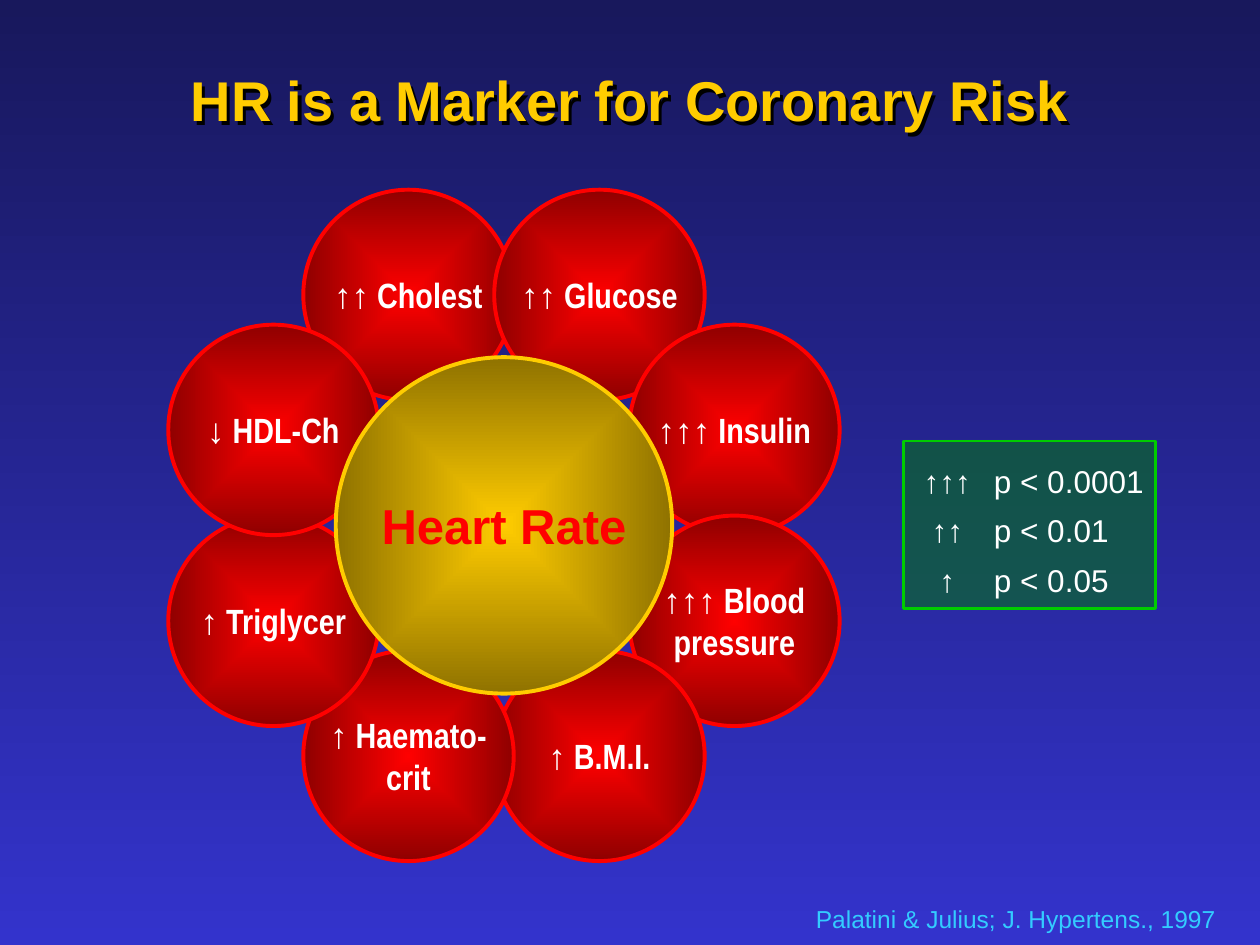
"""Build the slide on heart rate as a marker for coronary risk."""
from math import cos, radians, sin

from lxml import etree
from pptx import Presentation
from pptx.dml.color import RGBColor
from pptx.enum.shapes import MSO_SHAPE
from pptx.enum.text import MSO_ANCHOR, PP_ALIGN
from pptx.oxml.ns import qn
from pptx.util import Inches, Pt

OVAL, RECT = MSO_SHAPE.OVAL, MSO_SHAPE.RECTANGLE
LEFT, CENTER, RIGHT = PP_ALIGN.LEFT, PP_ALIGN.CENTER, PP_ALIGN.RIGHT
MIDDLE = MSO_ANCHOR.MIDDLE

NIGHT = RGBColor(0x18, 0x18, 0x5C)
BLUE = RGBColor(0x33, 0x33, 0xCC)
SKY = RGBColor(0x33, 0xCC, 0xFF)
GOLD = RGBColor(0xFF, 0xCC, 0x00)
DARK_GOLD = RGBColor(0x8F, 0x72, 0x00)
RED = RGBColor(0xFF, 0x00, 0x00)
DARK_RED = RGBColor(0x8F, 0x00, 0x00)
GREEN = RGBColor(0x00, 0x80, 0x00)
LIME = RGBColor(0x00, 0xCC, 0x00)
WHITE = RGBColor(0xFF, 0xFF, 0xFF)

TITLE = "HR is a Marker for Coronary Risk"
SOURCE = "Palatini & Julius; J. Hypertens., 1997"
HUB = "Heart Rate"
PETALS = ["↑↑ Cholest", "↑↑ Glucose", "↑↑↑ Insulin", "↑↑↑ Blood\npressure",
          "↑ B.M.I.", "↑ Haemato-\ncrit", "↑ Triglycer", "↓ HDL-Ch"]
LEGEND = [("↑↑↑", "p < 0.0001"), ("↑↑", "p < 0.01"), ("↑", "p < 0.05")]
LEGEND_TABS = [(0.25, "ctr"), (0.62, "l")]

CENTER_X, CENTER_Y = 4, 4.17
ORBIT = 1.98
PETAL_SIZE, HUB_SIZE = 1.67, 2.67
FIRST_ANGLE = -112.5


def add_xml(parent, tag, **attrs):
    return etree.SubElement(parent, qn(tag), {k: str(v) for k, v in attrs.items()})


def set_text(sp, text, size, color, font="Arial", bold=False, align=CENTER, wrap=False):
    tf = sp.text_frame
    tf.text = text
    tf.word_wrap = wrap
    tf.vertical_anchor = MIDDLE
    for p in tf.paragraphs:
        p.alignment = align
        for r in p.runs:
            r.font.name = font
            r.font.size = Pt(size)
            r.font.bold = bold
            r.font.color.rgb = color


def set_gradient(fill, *colors):
    fill.gradient()
    for stop, color in zip(fill.gradient_stops, colors):
        stop.color.rgb = color


def add_box(s, x, y, w, h):
    return s.shapes.add_textbox(Inches(x), Inches(y), Inches(w), Inches(h))


def add_shape(s, kind, x, y, w, h, line, width):
    sp = s.shapes.add_shape(kind, Inches(x), Inches(y), Inches(w), Inches(h))
    sp.shadow.inherit = False
    sp.line.color.rgb = line
    sp.line.width = Pt(width)
    return sp


def add_disc(s, cx, cy, size, inner, outer):
    sp = add_shape(s, OVAL, cx - size / 2, cy - size / 2, size, size, inner, 2.25)
    set_gradient(sp.fill, inner, outer)
    grad = sp._element.spPr.find(qn("a:gradFill"))
    grad.remove(grad.find(qn("a:lin")))
    path = add_xml(grad, "a:path", path="shape")
    add_xml(path, "a:fillToRect", l=50000, t=50000, r=50000, b=50000)
    return sp


def add_title(s):
    sp = add_box(s, 0.75, 0.5, 8.5, 0.58)
    set_text(sp, TITLE, 32, GOLD, bold=True, wrap=True)
    sp.fill.background()
    effects = add_xml(sp._element.spPr, "a:effectLst")
    shadow = add_xml(effects, "a:outerShdw", dist=Pt(2.5), dir=2700000)
    add_xml(shadow, "a:srgbClr", val="000000")


def add_flower(s):
    for i, label in enumerate(PETALS):
        angle = radians(FIRST_ANGLE + i * 360 / len(PETALS))
        sp = add_disc(s, CENTER_X + ORBIT * cos(angle), CENTER_Y + ORBIT * sin(angle),
                      PETAL_SIZE, RED, DARK_RED)
        set_text(sp, label, 20, WHITE, "Arial Narrow", bold=True)
    sp = add_disc(s, CENTER_X, CENTER_Y, HUB_SIZE, GOLD, DARK_GOLD)
    set_text(sp, HUB, 28, RED, bold=True)


def add_legend(s):
    sp = add_shape(s, RECT, 7.17, 3.5, 2, 1.33, LIME, 1.5)
    sp.fill.solid()
    sp.fill.fore_color.rgb = GREEN
    color = sp._element.spPr.find(qn("a:solidFill"))[0]
    add_xml(color, "a:alpha", val=50000)
    text = "\n".join(f"\t{arrows}\t{level}" for arrows, level in LEGEND)
    set_text(sp, text, 18, WHITE, align=LEFT)
    for p in sp.text_frame.paragraphs:
        p.line_spacing = 1.3
        tabs = add_xml(p._p.get_or_add_pPr(), "a:tabLst")
        for pos, align in LEGEND_TABS:
            add_xml(tabs, "a:tab", pos=Inches(pos), algn=align)


def main():
    prs = Presentation()
    prs.slide_width, prs.slide_height = Inches(10), Inches(7.5)
    s = prs.slides.add_slide(prs.slide_layouts[6])
    fill = s.background.fill
    set_gradient(fill, NIGHT, BLUE)
    fill.gradient_angle = 270
    add_title(s)
    set_text(add_box(s, 5.92, 7.17, 3.83, 0.25), SOURCE, 14, SKY, align=RIGHT)
    add_flower(s)
    add_legend(s)
    prs.save("out.pptx")


if __name__ == "__main__":
    main()
